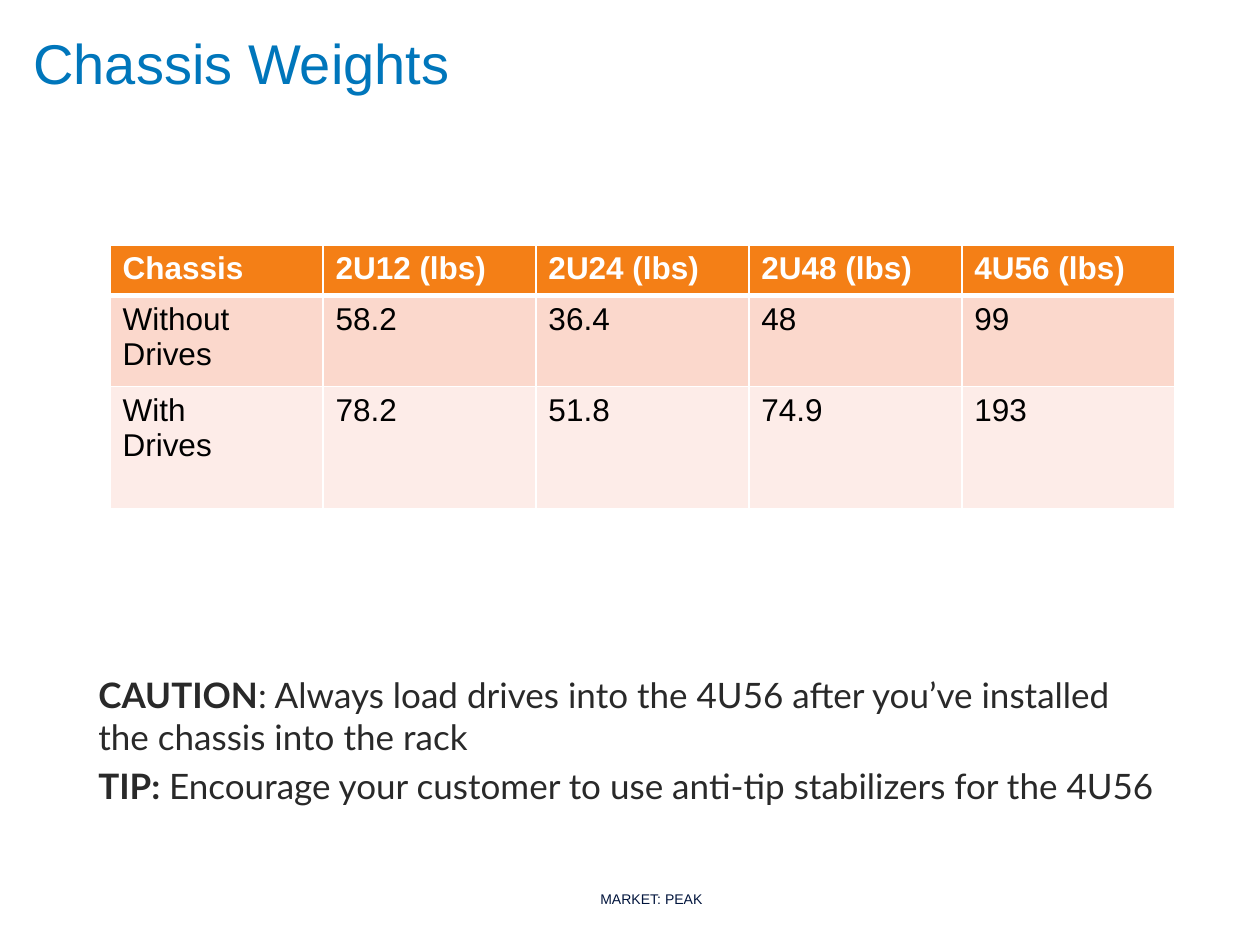
from pptx import Presentation
from pptx.dml.color import RGBColor as RGB
from pptx.enum.text import MSO_ANCHOR as Anchor, PP_ALIGN as Align
from pptx.oxml import parse_xml
from pptx.oxml.ns import nsdecls
from pptx.util import Pt

PX = 914400 // 126
WHITE = RGB(0xFF, 0xFF, 0xFF)
BLACK = RGB(0, 0, 0)
BLUE = RGB(0x00, 0x76, 0xBB)
NAVY = RGB(0x00, 0x14, 0x3C)
GREY = RGB(0x29, 0x29, 0x29)
ORANGE = RGB(0xF4, 0x7F, 0x16)
PEACH = RGB(0xFB, 0xD8, 0xCC)
PALE = RGB(0xFD, 0xEC, 0xE8)


def add_run(para, text, size, color, bold=False, face="Arial"):
    run = para.add_run()
    run.text = text
    font = run.font
    font.name, font.size, font.bold = face, Pt(size), bold
    font.color.rgb = color


def add_box(x, y, w, h, anchor):
    box = slide.shapes.add_textbox(x * PX, y * PX, w * PX, h * PX)
    frame = box.text_frame
    frame.word_wrap = True
    frame.vertical_anchor = anchor
    return frame


prs = Presentation()
prs.slide_width, prs.slide_height = 1260 * PX, 945 * PX
slide = prs.slides.add_slide(prs.slide_layouts[6])

# Footer
foot = add_box(498, 891, 294, 16, Anchor.MIDDLE)
foot.margin_left = 13 * PX
foot.margin_top = foot.margin_right = foot.margin_bottom = 0
foot.paragraphs[0].alignment = Align.CENTER
add_run(foot.paragraphs[0], "MARKET: PEAK", 8, NAVY)

# Title
title = add_box(21, 21, 941, 81, Anchor.BOTTOM)
add_run(title.paragraphs[0], "Chassis Weights", 32, BLUE)

# Advice
advice = [
    ("CAUTION", ": Always load drives into the 4U56 after you’ve installed "
     "the chassis into the rack"),
    ("TIP: ", "Encourage your customer to use anti-tip stabilizers for the 4U56"),
]
notes = add_box(38, 667, 1135, 184, Anchor.TOP)
for i, (lead, rest) in enumerate(advice):
    para = notes.add_paragraph() if i else notes.paragraphs[0]
    para.level = 1
    props = para._p.get_or_add_pPr()
    props.set("marL", str(48 * PX))
    props.set("indent", "0")
    if i:
        para.space_before = Pt(4)
    add_run(para, lead, 20, GREY, True, "Lato")
    add_run(para, rest, 20, GREY, False, "Lato")

# Weights table
rows = [
    (48, ORANGE, ["Chassis", "2U12 (lbs)", "2U24 (lbs)", "2U48 (lbs)", "4U56 (lbs)"]),
    (91, PEACH, ["Without\nDrives", "58.2", "36.4", "48", "99"]),
    (122, PALE, ["With\nDrives", "78.2", "51.8", "74.9", "193"]),
]
high = sum(row[0] for row in rows)
table = slide.shapes.add_table(3, 5, 110 * PX, 245 * PX, 1065 * PX, high * PX).table
table.horz_banding = False
for col in table.columns:
    col.width = 213 * PX
for r, (tall, fill, texts) in enumerate(rows):
    table.rows[r].height = tall * PX
    head = r == 0
    for c, text in enumerate(texts):
        cell = table.cell(r, c)
        for i, line in enumerate(text.split("\n")):
            frame = cell.text_frame
            para = frame.add_paragraph() if i else frame.paragraphs[0]
            add_run(para, line, 18, WHITE if head else BLACK, head)
        props = cell._tc.get_or_add_tcPr()
        for side in "LRTB":
            thick = (r, side) in [(0, "B"), (1, "T")]
            props.append(parse_xml(
                f'<a:ln{side} {nsdecls("a")} w="{Pt(3 if thick else 1)}">'
                f'<a:solidFill><a:srgbClr val="{WHITE}"/></a:solidFill></a:ln{side}>'))
        cell.fill.solid()
        cell.fill.fore_color.rgb = fill

prs.save("out.pptx")
